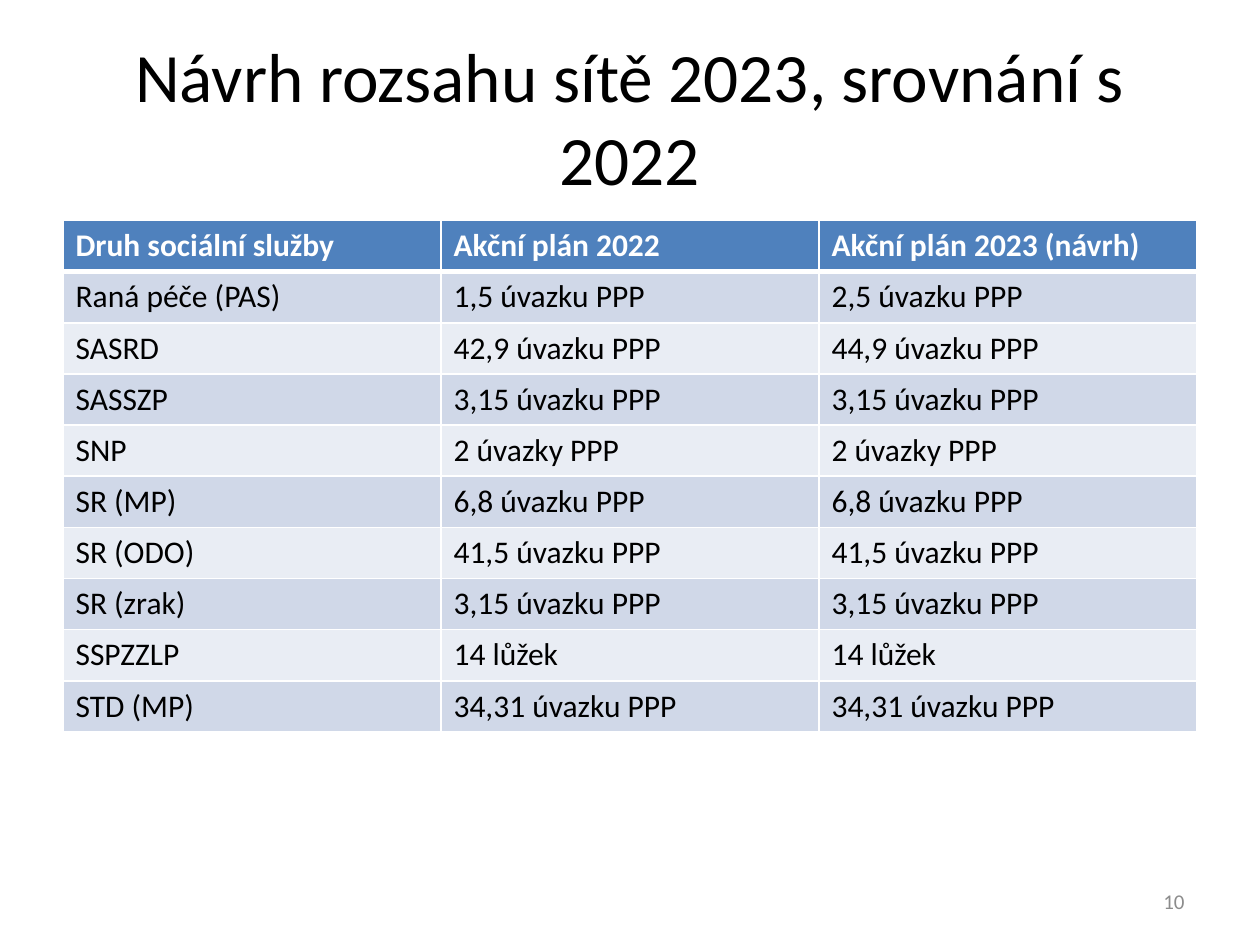
from lxml.etree import SubElement
from pptx import Presentation
from pptx.dml.color import RGBColor
from pptx.enum.text import MSO_ANCHOR, MSO_AUTO_SIZE, PP_ALIGN
from pptx.oxml.ns import qn
from pptx.util import Inches, Pt

COLORS = {
    "header": "4F81BD",
    "odd": "D0D8E8",
    "even": "E9EDF4",
    "white": "FFFFFF",
    "black": "000000",
    "gray": "8C8C8C",
}

HEADER = ["Druh sociální služby", "Akční plán 2022", "Akční plán 2023 (návrh)"]
SERVICES = [
    ["Raná péče (PAS)", "1,5 úvazku PPP", "2,5 úvazku PPP"],
    ["SASRD", "42,9 úvazku PPP", "44,9 úvazku PPP"],
    ["SASSZP", "3,15 úvazku PPP", "3,15 úvazku PPP"],
    ["SNP", "2 úvazky PPP", "2 úvazky PPP"],
    ["SR (MP)", "6,8 úvazku PPP", "6,8 úvazku PPP"],
    ["SR (ODO)", "41,5 úvazku PPP", "41,5 úvazku PPP"],
    ["SR (zrak)", "3,15 úvazku PPP", "3,15 úvazku PPP"],
    ["SSPZZLP", "14 lůžek", "14 lůžek"],
    ["STD (MP)", "34,31 úvazku PPP", "34,31 úvazku PPP"],
]


class SlideBuilder:
    font_name = "Calibri"

    def __init__(self, slide):
        self.slide = slide

    def fill_text(self, text_frame, text, size, color, align=PP_ALIGN.LEFT, bold=False):
        text_frame.text = text
        paragraph = text_frame.paragraphs[0]
        paragraph.alignment = align
        font = paragraph.runs[0].font
        values = {"name": self.font_name, "size": Pt(size), "bold": bold}
        for name, value in values.items():
            setattr(font, name, value)
        font.color.rgb = RGBColor.from_string(COLORS[color])

    def format_frame(self, text_frame):
        values = {
            "word_wrap": True,
            "auto_size": MSO_AUTO_SIZE.NONE,
            "vertical_anchor": MSO_ANCHOR.MIDDLE,
        }
        for name, value in values.items():
            setattr(text_frame, name, value)

    def title(self, text, left, top, width, height):
        title = self.slide.shapes.title
        box = {"left": left, "top": top, "width": width, "height": height}
        for name, value in box.items():
            setattr(title, name, Inches(value))
        self.format_frame(title.text_frame)
        self.fill_text(title.text_frame, text, 39.6, "black", PP_ALIGN.CENTER)

    def text(self, text, left, top, width, height, **style):
        box = self.slide.shapes.add_textbox(*map(Inches, (left, top, width, height)))
        self.format_frame(box.text_frame)
        self.fill_text(box.text_frame, text, **style)

    def cell_borders(self, cell, widths):
        properties = cell._tc.get_or_add_tcPr()
        for side, width in widths.items():
            line = SubElement(properties, qn(f"a:ln{side}"), w=str(Pt(width)))
            fill = SubElement(line, qn("a:solidFill"))
            SubElement(fill, qn("a:srgbClr"), val=COLORS["white"])

    def table(self, rows, left, top, width, height):
        """Draw a table with a header row and banded body rows."""
        box = map(Inches, (left, top, width, height))
        table = self.slide.shapes.add_table(len(rows), len(rows[0]), *box).table
        for row_index, row in enumerate(rows):
            is_header = row_index == 0
            band = "header" if is_header else ("even", "odd")[row_index % 2]
            widths = {
                "L": 1,
                "R": 1,
                "T": 3 if row_index == 1 else 1,
                "B": 3 if is_header else 1,
            }
            for column_index, text in enumerate(row):
                cell = table.cell(row_index, column_index)
                color = "white" if is_header else "black"
                self.fill_text(cell.text_frame, text, 18, color, bold=is_header)
                self.cell_borders(cell, widths)
                cell.fill.solid()
                cell.fill.fore_color.rgb = RGBColor.from_string(COLORS[band])


def main():
    presentation = Presentation()
    presentation.slide_width = Inches(10)
    presentation.slide_height = Inches(7.5)
    title_only = presentation.slide_layouts[5]
    builder = SlideBuilder(presentation.slides.add_slide(title_only))
    builder.title("Návrh rozsahu sítě 2023, srovnání s 2022", 0.5, 0.3, 9, 1.25)
    builder.table([HEADER, *SERVICES], 0.5, 1.75, 9, 4.06)
    builder.text("10", 7.17, 6.95, 2.33, 0.4,
                 size=12, color="gray", align=PP_ALIGN.RIGHT)
    presentation.save("out.pptx")


if __name__ == "__main__":
    main()
